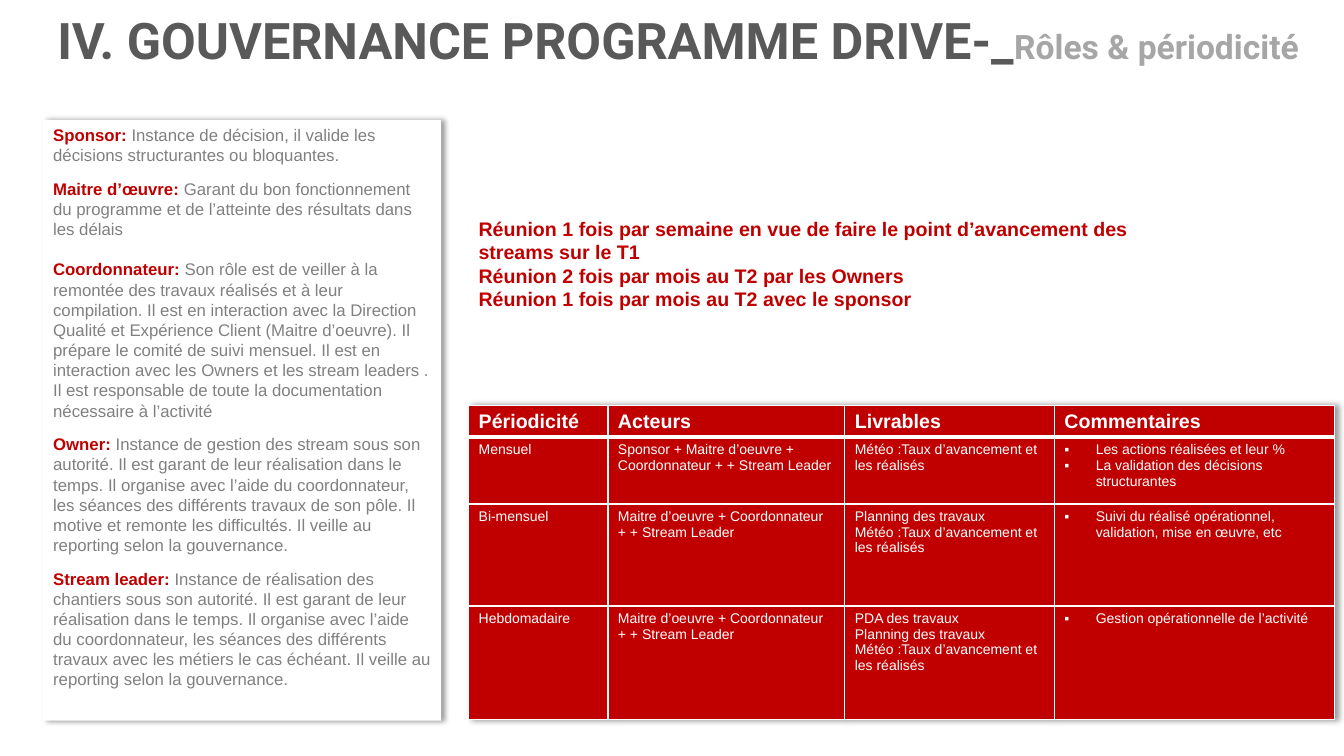
from lxml import etree
from pptx import Presentation
from pptx import util as u
from pptx.dml.color import RGBColor
from pptx.enum import shapes, text
from pptx.oxml import ns

COLORS = {"red": "C00000", "white": "FFFFFF", "dark": "595959",
          "grey": "808080", "light": "A6A6A6", "black": "000000"}


def add_span(para, words, color, **format_values):
    span = para.add_run()
    span.text = words
    span.font.color.rgb = RGBColor.from_string(COLORS[color])
    for name, value in format_values.items():
        setattr(span.font, name, value)


def add_shadow(effects):
    """Fill an effect list with a soft shadow falling to the right."""
    shadow = etree.SubElement(effects, ns.qn("a:outerShdw"), blurRad=str(u.Pt(4)),
                              dist=str(u.Pt(3)), dir="0", algn="l", rotWithShape="0")
    tint = etree.SubElement(shadow, ns.qn("a:srgbClr"), val=COLORS["black"])
    etree.SubElement(tint, ns.qn("a:alpha"), val="40000")


deck = Presentation()
deck.slide_width, deck.slide_height = u.Cm(33.87), u.Cm(19.05)
page = deck.slides.add_slide(deck.slide_layouts[5])

# Title
title = page.shapes.title
title_place = {"left": 1.19, "top": 0.1, "width": 32.66, "height": 1.8}
for name, value in title_place.items():
    setattr(title, name, u.Cm(value))
title_format = {"word_wrap": True, "auto_size": text.MSO_AUTO_SIZE.NONE,
                "vertical_anchor": text.MSO_ANCHOR.TOP}
for name, value in title_format.items():
    setattr(title.text_frame, name, value)
para = title.text_frame.paragraphs[0]
para.alignment = text.PP_ALIGN.LEFT
for words, color, size in [("IV. GOUVERNANCE PROGRAMME DRIVE-_", "dark", 36),
                           ("Rôles & périodicité", "light", 24)]:
    add_span(para, words, color, name="Roboto", size=u.Pt(size), bold=True)

# Roles panel and meeting rhythm: (space before, red bold words, grey words)
roles = [
    (0, "Sponsor: ", "Instance de décision, il valide les décisions structurantes "
     "ou bloquantes."),
    (9.6, "Maitre d’œuvre: ", "Garant du bon fonctionnement du programme et de "
     "l’atteinte des résultats dans les délais"),
    (14.4, "Coordonnateur: ", "Son rôle est de veiller à la remontée des travaux "
     "réalisés et à leur compilation. Il est en interaction avec la Direction Qualité "
     "et Expérience Client (Maitre d’oeuvre). Il prépare le comité de suivi mensuel. "
     "Il est en interaction avec les Owners et les stream leaders . Il est responsable "
     "de toute la documentation nécessaire à l’activité"),
    (9.6, "Owner: ", "Instance de gestion des stream sous son autorité. Il est garant "
     "de leur réalisation dans le temps. Il organise avec l’aide du coordonnateur, les "
     "séances des différents travaux de son pôle. Il motive et remonte les difficultés. "
     "Il veille au reporting selon la gouvernance."),
    (9.6, "Stream leader: ", "Instance de réalisation des chantiers sous son autorité. "
     "Il est garant de leur réalisation dans le temps. Il organise avec l’aide du "
     "coordonnateur, les séances des différents travaux avec les métiers le cas échéant. "
     "Il veille au reporting selon la gouvernance."),
]
meetings = [
    (0, "Réunion 1 fois par semaine en vue de faire le point d’avancement des streams "
     "sur le T1", ""),
    (0, "Réunion 2 fois par mois au T2 par les Owners", ""),
    (0, "Réunion 1 fois par mois au T2 avec le sponsor", ""),
]
boxes = [((1.09, 3.02, 10.03, 15.14), 12, roles, True),
         ((11.81, 5.33, 18.11, 2.64), 14, meetings, False)]
for place, size, entries, shaded in boxes:
    box = page.shapes.add_shape(shapes.MSO_SHAPE.RECTANGLE, *map(u.Cm, place))
    box.fill.solid()
    box.fill.fore_color.rgb = RGBColor.from_string(COLORS["white"])
    box.line.fill.background()
    box.shadow.inherit = False
    if shaded:
        add_shadow(box._element.spPr.find(ns.qn("a:effectLst")))
    frame = box.text_frame
    frame.word_wrap = True
    frame.vertical_anchor = text.MSO_ANCHOR.TOP
    for index, (gap, lead, words) in enumerate(entries):
        para = frame.add_paragraph() if index else frame.paragraphs[0]
        para_format = {"alignment": text.PP_ALIGN.LEFT, "space_before": u.Pt(gap),
                       "line_spacing": u.Pt(size * 1.2)}
        for name, value in para_format.items():
            setattr(para, name, value)
        add_span(para, lead, "red", name="Arial", size=u.Pt(size), bold=True)
        if words:
            add_span(para, words, "grey", name="Arial", size=u.Pt(size), bold=False)

# Governance table: each cell is a list of paragraphs
actors = "Maitre d’oeuvre + Coordonnateur + + Stream Leader"
weather = "Météo :Taux d’avancement et les réalisés"
planning = "Planning des travaux"
rows = [
    [["Périodicité"], ["Acteurs"], ["Livrables"], ["Commentaires"]],
    [["Mensuel"], ["Sponsor + " + actors], [weather],
     ["Les actions réalisées et leur %", "La validation des décisions structurantes"]],
    [["Bi-mensuel"], [actors], [planning, weather],
     ["Suivi du réalisé opérationnel, validation, mise en œuvre, etc"]],
    [["Hebdomadaire"], [actors], ["PDA des travaux", planning, weather],
     ["Gestion opérationnelle de l’activité"]],
]
widths = [3.51, 5.97, 5.28, 7.06]
heights = [0.81, 1.68, 2.57, 2.87]
table = page.shapes.add_table(len(rows), len(widths), u.Cm(11.81), u.Cm(10.21),
                              u.Cm(sum(widths)), u.Cm(sum(heights))).table
table.horz_banding = False
effects = etree.Element(ns.qn("a:effectLst"))
add_shadow(effects)
table._tbl.tblPr.insert(0, effects)
for column, width in zip(table.columns, widths):
    column.width = u.Cm(width)
for row, height in zip(table.rows, heights):
    row.height = u.Cm(height)

for row_index, row in enumerate(rows):
    header = row_index == 0
    for column_index, lines in enumerate(row):
        cell = table.cell(row_index, column_index)
        properties = cell._tc.get_or_add_tcPr()
        for side in "LRTB":
            thick = (row_index, side) in [(0, "B"), (1, "T")]
            border = etree.SubElement(properties, ns.qn("a:ln" + side),
                                      w=str(u.Pt(3 if thick else 1)))
            paint = etree.SubElement(border, ns.qn("a:solidFill"))
            etree.SubElement(paint, ns.qn("a:srgbClr"), val=COLORS["white"])
        cell.fill.solid()
        cell.fill.fore_color.rgb = RGBColor.from_string(COLORS["red"])
        for index, words in enumerate(lines):
            frame = cell.text_frame
            para = frame.add_paragraph() if index else frame.paragraphs[0]
            if column_index == 3 and not header:
                indents = para._p.get_or_add_pPr()
                indents.set("marL", str(u.Cm(0.79)))
                indents.set("indent", str(-u.Cm(0.79)))
                etree.SubElement(indents, ns.qn("a:buFont"), typeface="Arial")
                etree.SubElement(indents, ns.qn("a:buChar"), char="▪")
            add_span(para, words, "white", name="Arial",
                     size=u.Pt(14 if header else 10), bold=header)

deck.save("out.pptx")
